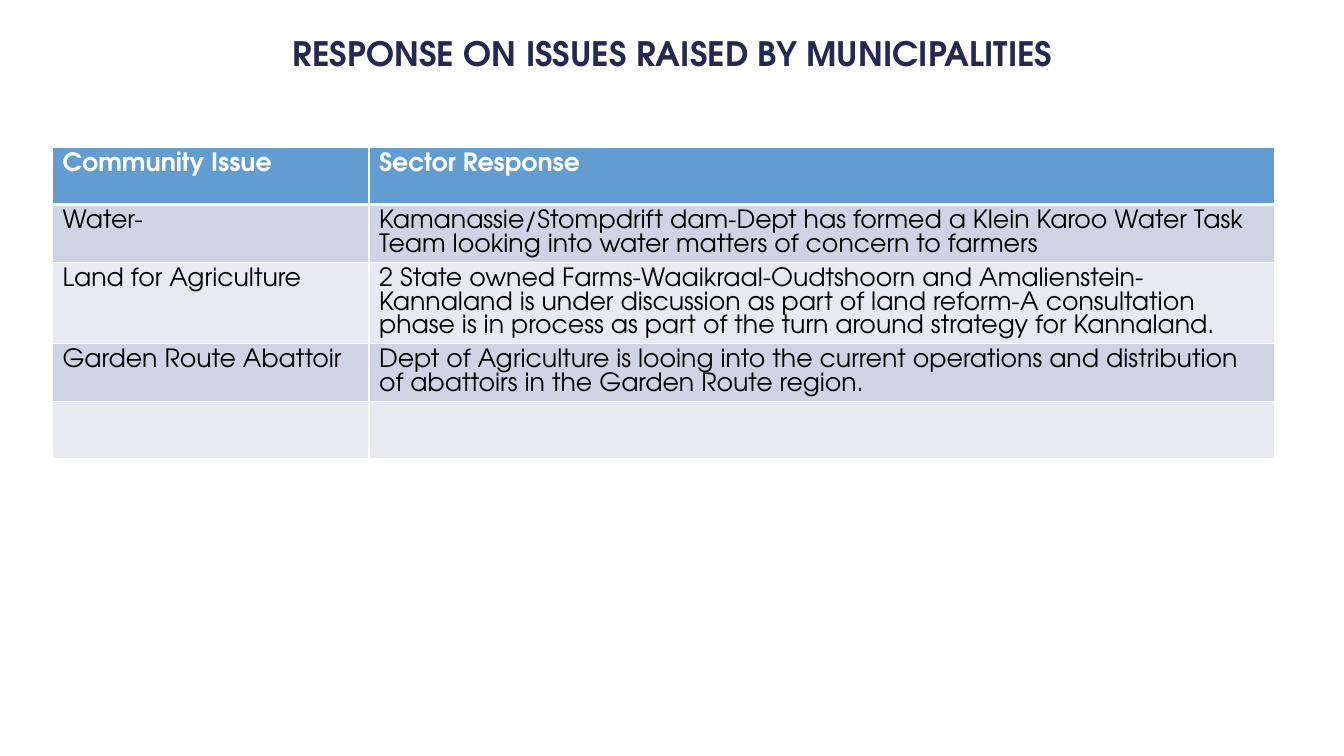
from dataclasses import dataclass

from lxml import etree
from pptx import Presentation
from pptx.dml.color import RGBColor
from pptx.enum.text import MSO_ANCHOR, PP_ALIGN
from pptx.oxml.ns import qn
from pptx.util import Inches, Pt

MIDDLE = MSO_ANCHOR.MIDDLE
CENTER = PP_ALIGN.CENTER
TITLE_ONLY = 5


@dataclass(frozen=True)
class Theme:
    font: str = "TeX Gyre Adventor"
    title_size: int = 24
    table_size: int = 18
    line_spacing: int = 17
    navy: str = "242852"
    header: str = "629DD1"
    bands: tuple = ("D0D3E3", "E9EAF1")
    white: str = "FFFFFF"
    black: str = "000000"
    rule: int = 1
    header_rule: int = 3


THEME = Theme()
WIDTH, HEIGHT = 13.33, 7.5
COLUMNS = (3.14, 8.98)
ROWS = (0.57, 0.57, 0.8, 0.57, 0.57)

TITLE = "RESPONSE ON ISSUES RAISED BY MUNICIPALITIES"
ISSUES = (
    ("Community Issue", "Sector Response"),
    ("Water-",
     "Kamanassie/Stompdrift dam-Dept has formed a Klein Karoo Water Task Team "
     "looking into water matters of concern to farmers"),
    ("Land for Agriculture",
     "2 State owned Farms-Waaikraal-Oudtshoorn and Amalienstein-Kannaland is "
     "under discussion as part of land reform-A consultation phase is in process "
     "as part of the turn around strategy for Kannaland."),
    ("Garden Route Abattoir",
     "Dept of Agriculture is looing into the current operations and distribution "
     "of abattoirs in the Garden Route region."),
    ("", ""),
)


def style_font(font, size, color, bold):
    font.name = THEME.font
    font.size = Pt(size)
    font.bold = bold
    font.color.rgb = RGBColor.from_string(color)


def add_title(page, text):
    box = page.shapes.title
    box.left, box.top = Inches(0.4), Inches(0.15)
    box.width, box.height = Inches(12.54), Inches(0.76)
    frame = box.text_frame
    frame.text = text
    frame.word_wrap = False
    frame.vertical_anchor = MIDDLE
    frame.margin_left = frame.margin_right = Inches(0.08)
    frame.margin_top = frame.margin_bottom = Inches(0.08)
    para = frame.paragraphs[0]
    para.alignment = CENTER
    style_font(para.runs[0].font, THEME.title_size, THEME.navy, True)


def set_borders(cell, bottom):
    """Draw white rules on the four sides; they precede the fill in the XML."""
    properties = cell._tc.get_or_add_tcPr()
    widths = {"lnL": THEME.rule, "lnR": THEME.rule, "lnT": THEME.rule, "lnB": bottom}
    for place, (side, width) in enumerate(widths.items()):
        line = etree.Element(qn(f"a:{side}"), w=str(Pt(width)))
        fill = etree.SubElement(line, qn("a:solidFill"))
        etree.SubElement(fill, qn("a:srgbClr"), val=THEME.white)
        properties.insert(place, line)


def fill_cell(cell, text, is_header, color):
    cell.fill.solid()
    cell.fill.fore_color.rgb = RGBColor.from_string(color)
    set_borders(cell, THEME.header_rule if is_header else THEME.rule)
    if not text:
        return
    cell.text_frame.text = text
    para = cell.text_frame.paragraphs[0]
    para.line_spacing = Pt(THEME.line_spacing)
    style_font(para.runs[0].font, THEME.table_size,
               THEME.white if is_header else THEME.black, is_header)


def add_issue_table(page, issues):
    table = page.shapes.add_table(
        len(ROWS), len(COLUMNS), Inches(0.52), Inches(1.46),
        Inches(sum(COLUMNS)), Inches(sum(ROWS))).table
    for column, width in zip(table.columns, COLUMNS):
        column.width = Inches(width)
    for index, (row, height, texts) in enumerate(zip(table.rows, ROWS, issues)):
        row.height = Inches(height)
        is_header = index == 0
        color = THEME.header if is_header else THEME.bands[(index - 1) % 2]
        for cell, text in zip(row.cells, texts):
            fill_cell(cell, text, is_header, color)


def main():
    deck = Presentation()
    deck.slide_width, deck.slide_height = Inches(WIDTH), Inches(HEIGHT)
    page = deck.slides.add_slide(deck.slide_layouts[TITLE_ONLY])
    add_title(page, TITLE)
    add_issue_table(page, ISSUES)
    deck.save("out.pptx")


if __name__ == "__main__":
    main()
